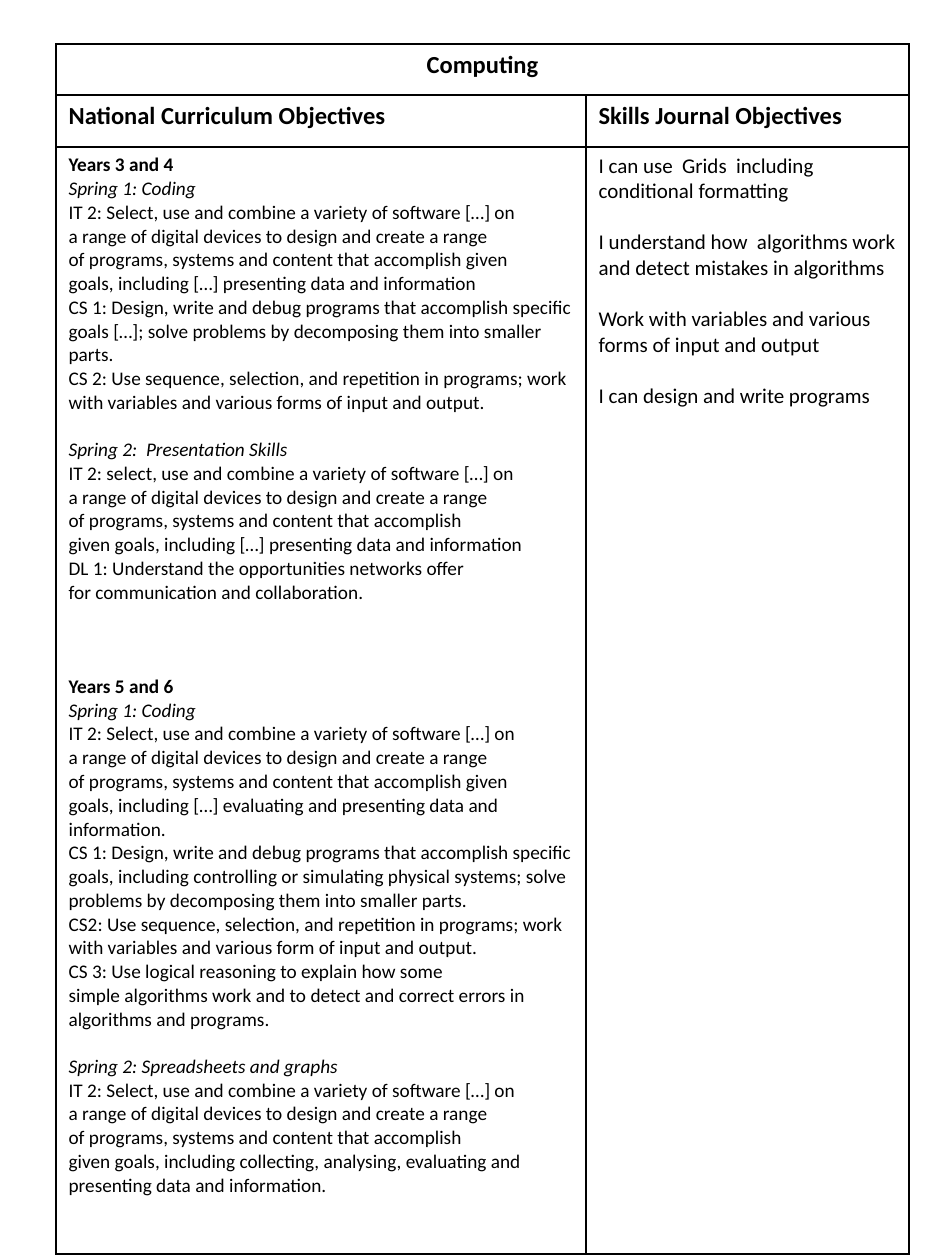
from lxml import etree
from pptx import Presentation
from pptx import util as u
from pptx.dml import color
from pptx.enum import text as t
from pptx.oxml import ns

PIXELS_PER_INCH = 126
BLACK = "000000"
COLUMN_WIDTHS = (530, 323)
ROW_HEIGHTS = (51, 52, 1107)

SOFTWARE = "IT 2: Select, use and combine a variety of software […] on a~range of digital devices to design and create a range of~programs, "
GIVEN_GOALS = "systems and content that accomplish given goals,~including […] "
TIED_GOALS = "systems and content that accomplish given~goals,~including "
DESIGN = "CS 1: Design, write and debug programs that~accomplish~specific goals"

CURRICULUM = [
    ("Years 3 and 4", {"bold": True}),
    ("Spring 1: Coding", {"italic": True}),
    (SOFTWARE + GIVEN_GOALS + "presenting data and information", {}),
    (DESIGN + " […]; solve problems~by decomposing them into~smaller parts.", {}),
    ("CS 2: Use sequence, selection, and repetition~in programs;~work with variables and various~forms of input and output.", {}),
    ("Spring 2:~ Presentation Skills", {"italic": True, "lines_before": 1}),
    (SOFTWARE.replace("Select", "select") + TIED_GOALS + "[…] presenting data and~information", {}),
    ("DL 1: Understand the opportunities networks offer for~communication and collaboration.", {}),
    ("Years 5 and 6", {"bold": True, "lines_before": 3}),
    ("Spring 1: Coding", {"italic": True}),
    (SOFTWARE + GIVEN_GOALS + "evaluating and presenting data and information.", {}),
    (DESIGN + ", including controlling~or simulating physical~systems; solve problems~by decomposing them into smaller~parts.", {}),
    ("CS2: Use sequence, selection, and repetition in~programs;~work with variables and various~form of input and output.", {}),
    ("CS 3: Use logical reasoning to explain how~some simple~algorithms work and to detect~and correct errors in algorithms~and programs.", {}),
    ("Spring 2: Spreadsheets and graphs", {"italic": True, "lines_before": 1}),
    (SOFTWARE + TIED_GOALS + "collecting, analysing,~evaluating and presenting data~and~information.", {}),
]
SKILLS = [
    ("I can use~ Grids~ including~ conditional~formatting", {}),
    ("I understand~how~ algorithms~work and~detect~mistakes~in algorithms", {"lines_before": 1}),
    ("Work with~variables and~various forms~of~input and~output", {"lines_before": 1}),
    ("I can design and~write programs", {"lines_before": 1}),
]


def px(length):
    """Turn whole pixels into EMU."""
    return u.Emu(round(length * u.Inches(1) / PIXELS_PER_INCH))


def rgb(value):
    """Turn a hex string into a colour."""
    return color.RGBColor.from_string(value)


def write(paragraph, words, size=11, bold=False, italic=False, align=t.PP_ALIGN.LEFT, lines_before=0):
    """Write words in a paragraph, reading a tilde as a non-breaking space."""
    paragraph.alignment = align
    paragraph.space_before = u.Pt(round(lines_before * size * 1.22, 1))
    run = paragraph.add_run()
    run.text = words.replace("~", chr(160))
    font = run.font
    font.name, font.size, font.bold, font.italic = "Calibri", u.Pt(size), bold, italic
    font.color.rgb = rgb(BLACK)


def fill_cell(cell, entries, **defaults):
    """Write one paragraph for each entry of a cell."""
    frame = cell.text_frame
    for index, (words, options) in enumerate(entries):
        paragraph = frame.add_paragraph() if index else frame.paragraphs[0]
        write(paragraph, words, **{**defaults, **options})


def outline_cell(cell):
    """Give a cell thin black borders and no fill."""
    properties = cell._tc.get_or_add_tcPr()
    for side in ("lnL", "lnR", "lnT", "lnB"):
        line = etree.SubElement(properties, ns.qn(f"a:{side}"), w=str(u.Pt(1)))
        solid = etree.SubElement(line, ns.qn("a:solidFill"))
        etree.SubElement(solid, ns.qn("a:srgbClr"), val=BLACK)
    cell.fill.background()


def add_grid(slide, left, top):
    """Add the plain bordered table."""
    frame = slide.shapes.add_table(len(ROW_HEIGHTS), len(COLUMN_WIDTHS), px(left), px(top),
                                   px(sum(COLUMN_WIDTHS)), px(sum(ROW_HEIGHTS)))
    table = frame.table
    table.first_row = table.horz_banding = False
    for column, width in zip(table.columns, COLUMN_WIDTHS):
        column.width = px(width)
    for row, height in zip(table.rows, ROW_HEIGHTS):
        row.height = px(height)
    for cell in table.iter_cells():
        outline_cell(cell)
    return table


def main():
    """Build the computing objectives slide."""
    presentation = Presentation()
    presentation.slide_width, presentation.slide_height = u.Inches(7.5), u.Inches(10)
    slide = presentation.slides.add_slide(presentation.slide_layouts[6])
    table = add_grid(slide, 56, 44)
    table.cell(0, 0).merge(table.cell(0, 1))
    fill_cell(table.cell(0, 0), [("Computing", {})], size=14, bold=True, align=t.PP_ALIGN.CENTER)
    for column, heading in enumerate(("National Curriculum Objectives", "Skills Journal Objectives")):
        fill_cell(table.cell(1, column), [(heading, {})], size=14, bold=True)
    fill_cell(table.cell(2, 0), CURRICULUM, size=11)
    fill_cell(table.cell(2, 1), SKILLS, size=12)
    presentation.save("out.pptx")


if __name__ == "__main__":
    main()
